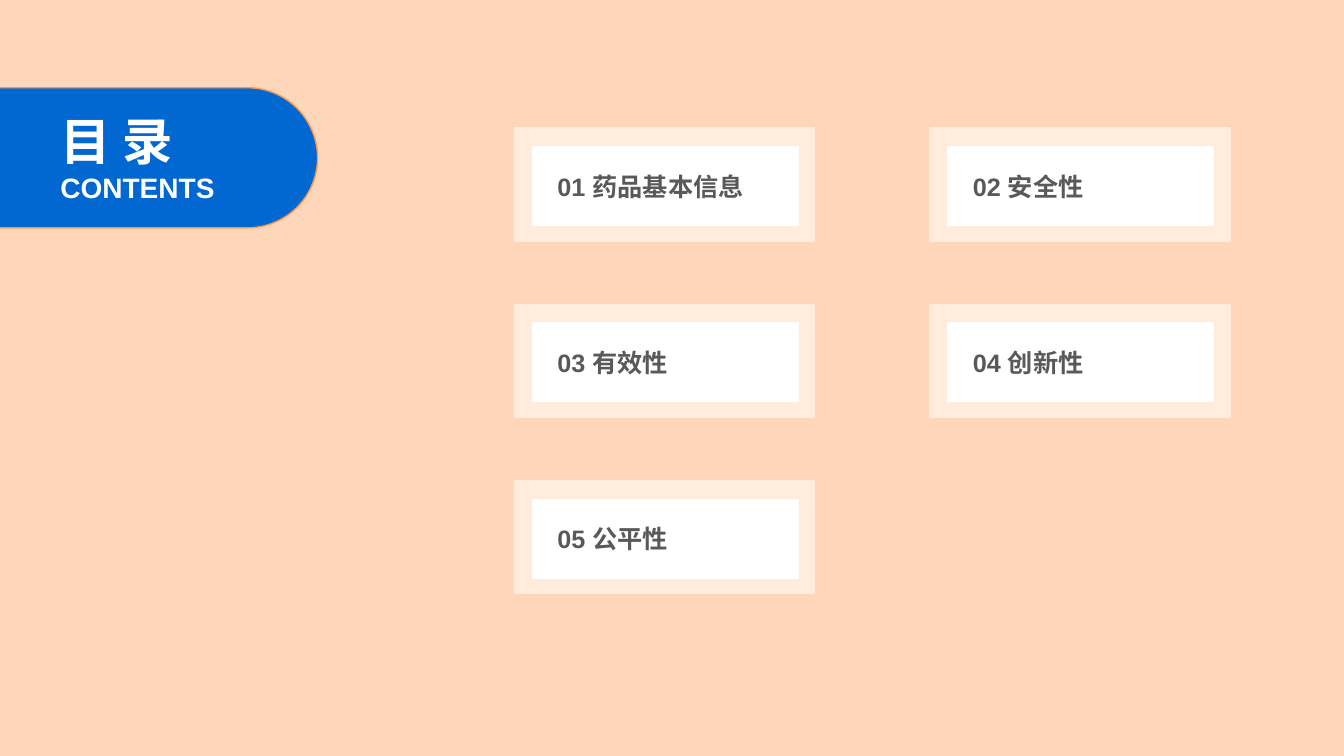
import pptx
import pptx.util
import pptx.dml.color
import pptx.enum.shapes
import pptx.enum.text

Inches = pptx.util.Inches
Pt = pptx.util.Pt
RGBColor = pptx.dml.color.RGBColor
SHAPE = pptx.enum.shapes.MSO_SHAPE
ALIGN = pptx.enum.text.PP_ALIGN
ANCHOR = pptx.enum.text.MSO_ANCHOR
FIT = pptx.enum.text.MSO_AUTO_SIZE

PEACH = RGBColor(0xFE, 0xD7, 0xBA)
CREAM = RGBColor(0xFF, 0xEC, 0xDD)
ORANGE = RGBColor(0xFB, 0x98, 0x4C)
BLUE = RGBColor(0x00, 0x68, 0xD0)
WHITE = RGBColor(0xFF, 0xFF, 0xFF)
GREY = RGBColor(0x59, 0x59, 0x59)

TOPICS = ["01 药品基本信息", "02 安全性", "03 有效性", "04 创新性", "05 公平性"]
COLS = 2
LEFT, TOP = 5.1, 1.27
STEP_X, STEP_Y = 4.12, 1.75


def assign(target, values):
    """Set each attribute of target that the dict names."""
    for name, value in values.items():
        setattr(target, name, value)


def add_block(shapes, kind, box, fill, line):
    block = shapes.add_shape(kind, *map(Inches, box))
    block.shadow.inherit = False
    block.fill.solid()
    block.fill.fore_color.rgb = fill
    block.line.color.rgb = line
    block.line.width = Pt(1)
    return block


def write(para, text, size, color):
    para.alignment = ALIGN.LEFT
    run = para.add_run()
    run.text = text
    assign(run.font, {"name": "Arial", "size": Pt(size), "bold": True})
    run.font.color.rgb = color


def add_title(slide):
    tab = add_block(slide.shapes, SHAPE.ROUNDED_RECTANGLE,
                    (-0.89, 0.87, 4.04, 1.39), BLUE, ORANGE)
    tab.adjustments[0] = 0.5
    box = slide.shapes.add_textbox(*map(Inches, (0.5, 1.04, 2.66, 1.04)))
    frame = box.text_frame
    assign(frame, {"word_wrap": True, "auto_size": FIT.SHAPE_TO_FIT_TEXT})
    write(frame.paragraphs[0], "目 录", 36, WHITE)
    write(frame.add_paragraph(), "CONTENTS", 20, WHITE)


def add_card(slide, left, top, text):
    """Group a cream frame with the white label inside it."""
    group = slide.shapes.add_group_shape()
    add_block(group.shapes, SHAPE.RECTANGLE, (left, top, 2.98, 1.12), CREAM, CREAM)
    label = add_block(group.shapes, SHAPE.RECTANGLE,
                      (left + 0.17, top + 0.17, 2.66, 0.81), WHITE, CREAM)
    frame = label.text_frame
    assign(frame, {"word_wrap": True, "vertical_anchor": ANCHOR.MIDDLE})
    para = frame.paragraphs[0]
    para.level = 1
    indent = para._p.get_or_add_pPr()
    indent.set("marL", str(Inches(0.16)))
    indent.set("indent", "0")
    write(para, text, 18, GREY)


def main():
    deck = pptx.Presentation()
    assign(deck, {"slide_width": Inches(13.33), "slide_height": Inches(7.5)})
    slide = deck.slides.add_slide(deck.slide_layouts[6])
    slide.background.fill.solid()
    slide.background.fill.fore_color.rgb = PEACH
    add_title(slide)
    for index, topic in enumerate(TOPICS):
        row, col = divmod(index, COLS)
        add_card(slide, LEFT + col * STEP_X, TOP + row * STEP_Y, topic)
    deck.save("out.pptx")


if __name__ == "__main__":
    main()
